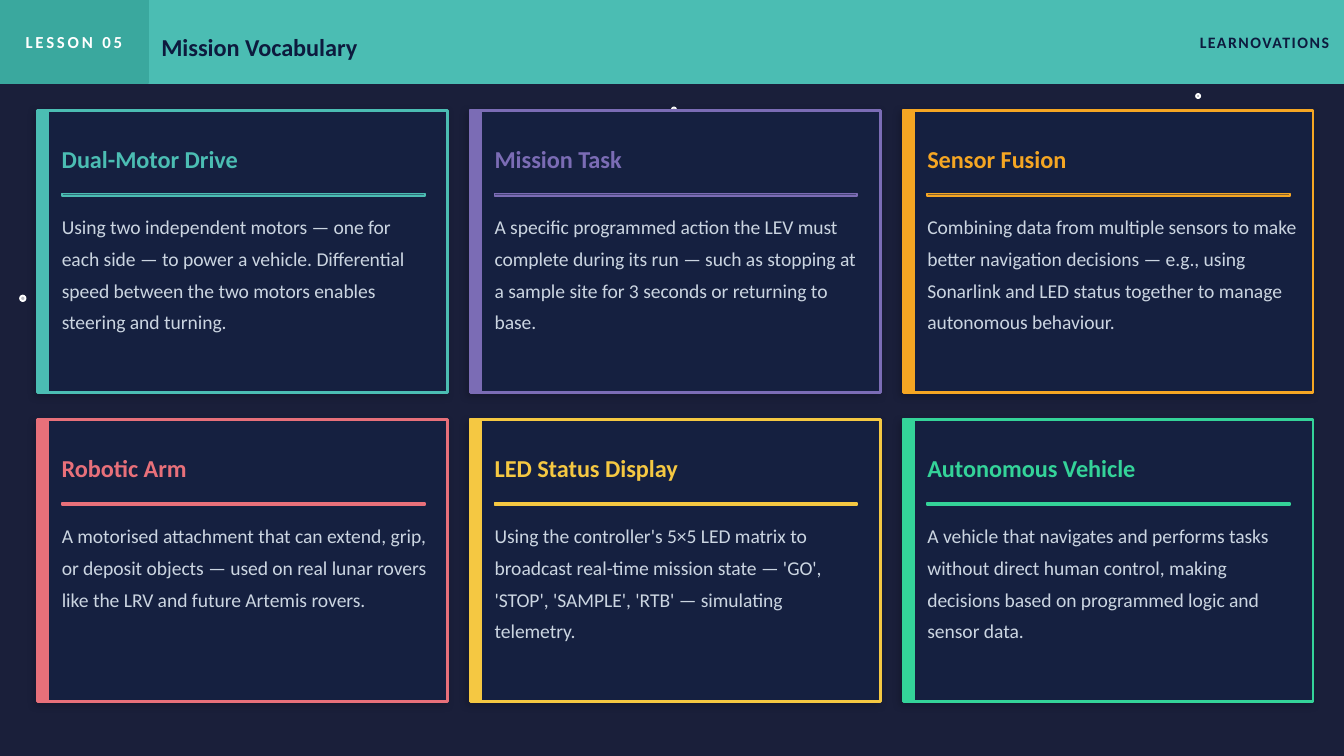
from pptx import Presentation
from pptx.dml.color import RGBColor
from pptx.enum.shapes import MSO_SHAPE as SHAPE
from pptx.enum.text import MSO_ANCHOR as ANCHOR, MSO_AUTO_SIZE as AUTO, PP_ALIGN as ALIGN
from pptx.oxml import parse_xml
from pptx.oxml.ns import nsdecls, qn
from pptx.util import Emu, Pt

PX = 9144
SLIDE_W = 1000
FONT = "Calibri"

NIGHT = RGBColor(0x1A, 0x1F, 0x3A)
PANEL = RGBColor(0x15, 0x20, 0x40)
NAVY = RGBColor(0x0D, 0x1B, 0x3E)
WHITE = RGBColor(0xFF, 0xFF, 0xFF)
MIST = RGBColor(0xCB, 0xD5, 0xE1)
TEAL = RGBColor(0x4B, 0xBD, 0xB3)
DEEP_TEAL = RGBColor(0x3A, 0xA8, 0x9E)
PURPLE = RGBColor(0x7B, 0x6C, 0xB5)
ORANGE = RGBColor(0xF5, 0xA6, 0x23)
CORAL = RGBColor(0xE8, 0x70, 0x7A)
YELLOW = RGBColor(0xF5, 0xC8, 0x42)
GREEN = RGBColor(0x34, 0xD3, 0x99)

STARS = [(350, 130, 4, 40), (500, 80, 3, 65), (890, 70, 3, 60), (15, 220, 4, 70)]

COLUMNS = 3
CARD_LEFT, CARD_TOP = 28, 82
CARD_W, CARD_H = 305, 210
STEP_X, STEP_Y = 322, 230

CARDS = [
    ("Dual-Motor Drive", TEAL,
     "Using two independent motors — one for each side — to power a vehicle. "
     "Differential speed between the two motors enables steering and turning."),
    ("Mission Task", PURPLE,
     "A specific programmed action the LEV must complete during its run — such as "
     "stopping at a sample site for 3 seconds or returning to base."),
    ("Sensor Fusion", ORANGE,
     "Combining data from multiple sensors to make better navigation decisions — e.g., "
     "using Sonarlink and LED status together to manage autonomous behaviour."),
    ("Robotic Arm", CORAL,
     "A motorised attachment that can extend, grip, or deposit objects — used on real "
     "lunar rovers like the LRV and future Artemis rovers."),
    ("LED Status Display", YELLOW,
     "Using the controller's 5×5 LED matrix to broadcast real-time mission state — "
     "'GO', 'STOP', 'SAMPLE', 'RTB' — simulating telemetry."),
    ("Autonomous Vehicle", GREEN,
     "A vehicle that navigates and performs tasks without direct human control, making "
     "decisions based on programmed logic and sensor data."),
]


def px(*values):
    return [Emu(v * PX) for v in values]


def add_shape(slide, box, fill, line=None, width=1, alpha=None, kind=SHAPE.RECTANGLE):
    sp = slide.shapes.add_shape(kind, *px(*box))
    sp.shadow.inherit = False
    sp.fill.solid()
    sp.fill.fore_color.rgb = fill
    sp.line.color.rgb = line or fill
    sp.line.width = Pt(width)
    if alpha is not None:
        color = sp.fill._xPr.find(qn("a:solidFill"))[0]
        color.append(parse_xml(f'<a:alpha {nsdecls("a")} val="{alpha * 1000}"/>'))
    return sp


def add_shadow(sp):
    sp._element.spPr.find(qn("a:effectLst")).append(parse_xml(
        f'<a:outerShdw {nsdecls("a")} blurRad="{Pt(4)}" dist="{Pt(2)}" dir="{135 * 60000}" '
        'algn="bl" rotWithShape="0"><a:srgbClr val="000000"><a:alpha val="18000"/>'
        '</a:srgbClr></a:outerShdw>'))


def write_text(sp, text, size, color, bold=True, align=ALIGN.LEFT, anchor=ANCHOR.MIDDLE,
               top=0, right=0, spacing=None, line_spacing=None):
    tf = sp.text_frame
    tf.word_wrap = True
    tf.auto_size = AUTO.NONE
    tf.vertical_anchor = anchor
    tf.margin_left, tf.margin_top, tf.margin_right, tf.margin_bottom = px(0, top, right, 0)
    p = tf.paragraphs[0]
    p.alignment = align
    if line_spacing:
        p.line_spacing = line_spacing
    r = p.add_run()
    r.text = text
    r.font.name = FONT
    r.font.size = Pt(size)
    r.font.bold = bold
    r.font.color.rgb = color
    if spacing:
        r.font._element.set("spc", str(round(spacing * 100)))


def add_text(slide, box, text, size, color, **style):
    write_text(slide.shapes.add_textbox(*px(*box)), text, size, color, **style)


def add_title(slide, box, text, size, color, **style):
    sp = slide.shapes.title
    sp.left, sp.top, sp.width, sp.height = px(*box)
    write_text(sp, text, size, color, **style)
    slide.shapes._spTree.append(sp._element)


def add_header(slide):
    add_shape(slide, (0, 0, SLIDE_W, 62), TEAL)
    add_shape(slide, (0, 0, 110, 62), DEEP_TEAL)
    add_text(slide, (0, 0, 110, 62), "LESSON 05", 9, WHITE, align=ALIGN.CENTER, spacing=1.5)
    add_title(slide, (120, 0, 750, 62), "Mission Vocabulary", 13, NAVY, top=8)
    add_text(slide, (770, 0, 230, 62), "LEARNOVATIONS", 8.5, NAVY,
             align=ALIGN.RIGHT, right=11, spacing=0.8)


def add_card(slide, x, y, term, color, definition):
    add_shadow(add_shape(slide, (x, y, CARD_W, CARD_H), PANEL, line=color, width=1.5))
    add_shape(slide, (x, y, 8, CARD_H), color)
    add_text(slide, (x + 18, y + 12, 280, 48), term, 13, color)
    add_shape(slide, (x + 18, y + 62, 270, 2), color, alpha=50)
    add_text(slide, (x + 18, y + 72, 275, 125), definition, 10.5, MIST,
             bold=False, anchor=ANCHOR.TOP, line_spacing=1.35)


def main():
    prs = Presentation()
    prs.slide_width = Emu(SLIDE_W * PX)
    prs.slide_height = Emu(prs.slide_width * 9 // 16)
    slide = prs.slides.add_slide(prs.slide_layouts[5])
    slide.background.fill.solid()
    slide.background.fill.fore_color.rgb = NIGHT
    for x, y, d, alpha in STARS:
        add_shape(slide, (x, y, d, d), WHITE, alpha=alpha, kind=SHAPE.OVAL)
    add_header(slide)
    for i, card in enumerate(CARDS):
        row, col = divmod(i, COLUMNS)
        add_card(slide, CARD_LEFT + col * STEP_X, CARD_TOP + row * STEP_Y, *card)
    prs.save("out.pptx")


if __name__ == "__main__":
    main()
